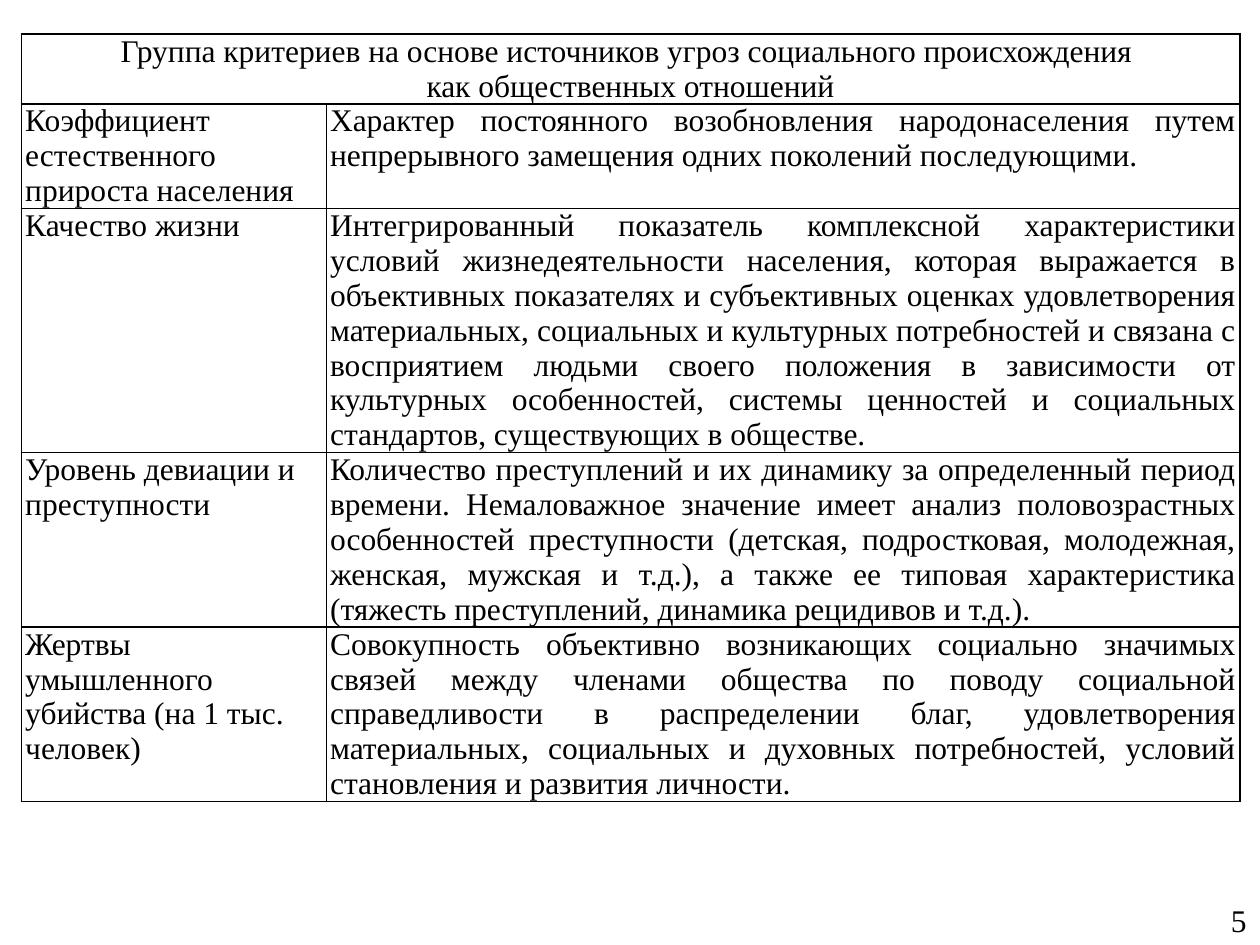
from lxml.etree import SubElement
from pptx import Presentation
from pptx.dml.color import RGBColor
from pptx.enum.text import MSO_AUTO_SIZE, PP_ALIGN as Align
from pptx.oxml.ns import qn
from pptx.util import Inches, Pt

FONT, SIZE, BLACK = "Times New Roman", 18, "000000"
LINE_HEIGHT = 0.27
COLUMN_WIDTHS = (2.42, 7.25)

HEADING = ("Группа критериев на основе источников угроз социального происхождения \n"
           "как общественных отношений")
# criterion, description, number of text lines
CRITERIA = [
    ("Коэффициент естественного прироста населения",
     "Характер постоянного возобновления народонаселения путем непрерывного "
     "замещения одних поколений последующими.", 3),
    ("Качество жизни",
     "Интегрированный показатель комплексной характеристики условий "
     "жизнедеятельности населения, которая выражается в объективных показателях "
     "и субъективных оценках удовлетворения материальных, социальных и культурных "
     "потребностей и связана с восприятием людьми своего положения в зависимости "
     "от культурных особенностей, системы ценностей и социальных стандартов, "
     "существующих в обществе.", 7),
    ("Уровень девиации и преступности",
     "Количество преступлений и их динамику за определенный период времени. "
     "Немаловажное значение имеет анализ половозрастных особенностей преступности "
     "(детская, подростковая, молодежная, женская, мужская и т.д.), а также ее "
     "типовая характеристика (тяжесть преступлений, динамика рецидивов и т.д.).", 5),
    ("Жертвы умышленного убийства (на 1 тыс. человек)",
     "Совокупность объективно возникающих социально значимых связей между членами "
     "общества по поводу социальной справедливости в распределении благ, "
     "удовлетворения материальных, социальных и духовных потребностей, условий "
     "становления и развития личности.", 5),
]
PAGE_NUMBER = "5"


def write(frame, text, align):
    frame.text = text
    for para in frame.paragraphs:
        para.alignment = align
        for span in para.runs:
            span.font.name = FONT
            span.font.size = Pt(SIZE)
            span.font.color.rgb = RGBColor.from_string(BLACK)


def style_cell(cell):
    """Set narrow margins, thin black borders and no fill."""
    cell.margin_left = cell.margin_right = Inches(0.03)
    cell.margin_top = cell.margin_bottom = 0
    properties = cell._tc.get_or_add_tcPr()
    for side in ("a:lnL", "a:lnR", "a:lnT", "a:lnB"):
        line = SubElement(properties, qn(side), w=str(Pt(1)))
        SubElement(SubElement(line, qn("a:solidFill")), qn("a:srgbClr"), val=BLACK)
    cell.fill.background()


def add_criteria_table(page):
    line_counts = [2] + [lines for _, _, lines in CRITERIA]
    table = page.shapes.add_table(
        len(line_counts), len(COLUMN_WIDTHS), Inches(0.17), Inches(0.27),
        Inches(sum(COLUMN_WIDTHS)), Inches(sum(line_counts) * LINE_HEIGHT)).table
    table.first_row = table.horz_banding = False
    for column, width in zip(table.columns, COLUMN_WIDTHS):
        column.width = Inches(width)
    for row, lines in zip(table.rows, line_counts):
        row.height = Inches(lines * LINE_HEIGHT)
    for cell in table.iter_cells():
        style_cell(cell)

    heading = table.cell(0, 0)
    heading.merge(table.cell(0, 1))
    write(heading.text_frame, HEADING, Align.CENTER)
    for index, (criterion, description, _) in enumerate(CRITERIA, start=1):
        write(table.cell(index, 0).text_frame, criterion, Align.LEFT)
        write(table.cell(index, 1).text_frame, description, Align.JUSTIFY)


def add_page_number(page):
    box = page.shapes.add_textbox(Inches(9.67), Inches(7.1), Inches(0.33), Inches(0.4))
    box.text_frame.word_wrap = False
    box.text_frame.auto_size = MSO_AUTO_SIZE.SHAPE_TO_FIT_TEXT
    write(box.text_frame, PAGE_NUMBER, Align.LEFT)


def main():
    deck = Presentation()
    deck.slide_width, deck.slide_height = Inches(10), Inches(7.5)
    page = deck.slides.add_slide(deck.slide_layouts[6])
    add_criteria_table(page)
    add_page_number(page)
    deck.save("out.pptx")


if __name__ == "__main__":
    main()
